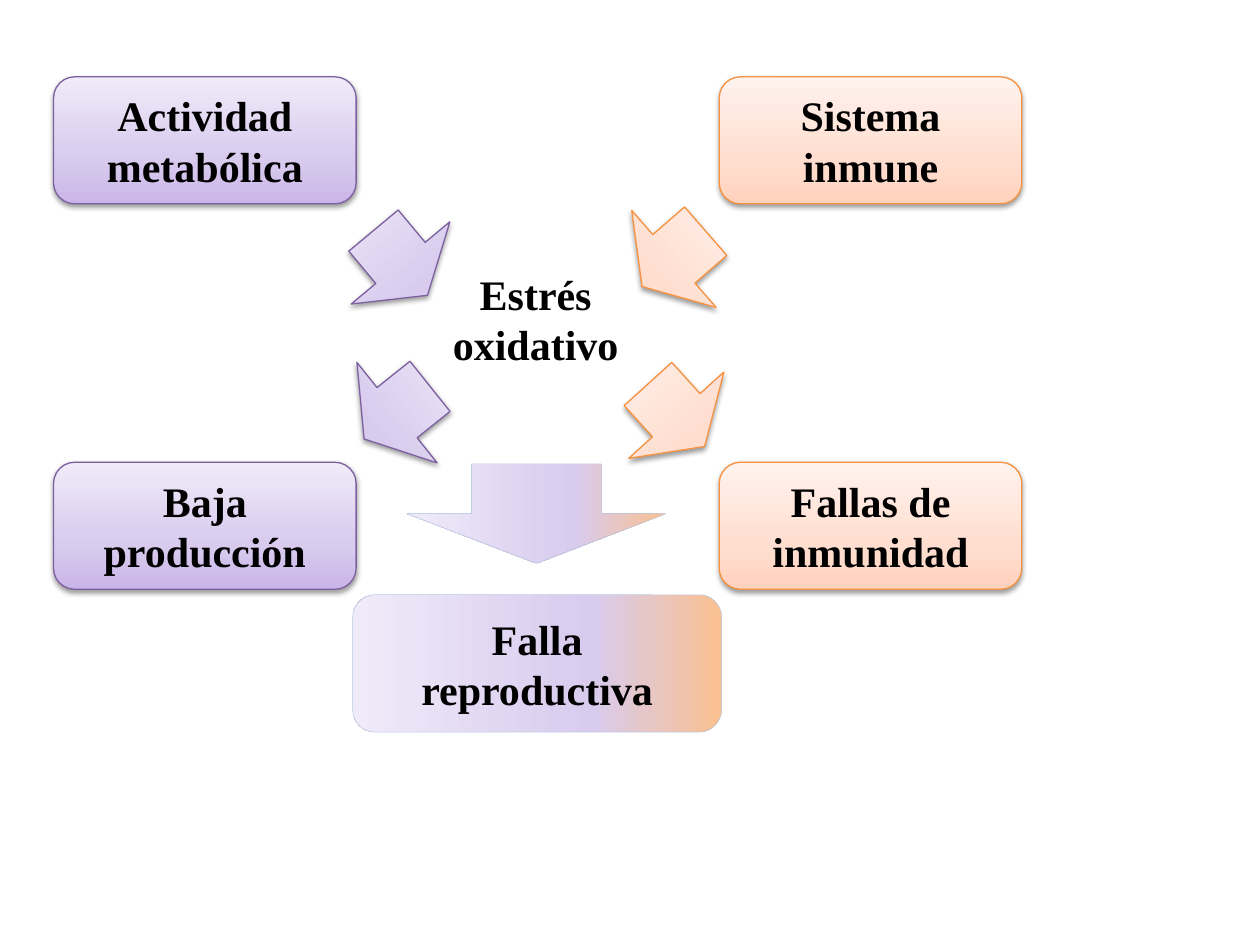
from dataclasses import dataclass

from lxml import etree
from pptx import Presentation
from pptx.dml.color import RGBColor
from pptx.enum.shapes import MSO_SHAPE
from pptx.enum.text import MSO_ANCHOR, MSO_AUTO_SIZE, PP_ALIGN
from pptx.oxml.ns import qn
from pptx.util import Cm, Pt

BOX = MSO_SHAPE.ROUNDED_RECTANGLE
ARROW = MSO_SHAPE.DOWN_ARROW
CENTER = PP_ALIGN.CENTER
MIDDLE = MSO_ANCHOR.MIDDLE
GROW = MSO_AUTO_SIZE.SHAPE_TO_FIT_TEXT


@dataclass(frozen=True)
class Skin:
    stops: tuple[str, str, str]
    angle: int
    line: str
    width: float
    shadow: bool


@dataclass(frozen=True)
class Theme:
    font: str = "Times New Roman"
    size: int = 24
    ink: str = "000000"
    marks: tuple[int, int, int] = (0, 35, 100)
    purple: Skin = Skin(("C9B5E8", "D8CBEE", "F0EAF9"), 90, "7D60A0", 0.75, True)
    orange: Skin = Skin(("FFD2BD", "FFDED0", "FFF2ED"), 90, "F69240", 0.75, True)
    blend: Skin = Skin(("FAC090", "D8CBEE", "F0EAF9"), 180, "B0C6E1", 0.25, False)


@dataclass(frozen=True)
class Part:
    """A filled shape; lengths are in centimetres."""
    kind: int
    skin: Skin
    left: float
    top: float
    width: float
    height: float
    turn: float = 0
    text: str = ""


THEME = Theme()


def add_color(parent, value: str):
    return etree.SubElement(parent, qn("a:srgbClr"), val=value)


def paint(shape, skin: Skin) -> None:
    """Apply a three-stop gradient, an outline and a soft shadow."""
    shape.fill.gradient()
    shape.fill.gradient_angle = skin.angle
    stops = shape._element.spPr.find(f".//{qn('a:gsLst')}")
    for old in list(stops):
        stops.remove(old)
    for mark, color in zip(THEME.marks, skin.stops):
        add_color(etree.SubElement(stops, qn("a:gs"), pos=str(mark * 1000)), color)

    shape.line.color.rgb = RGBColor.from_string(skin.line)
    shape.line.width = Pt(skin.width)

    shape.shadow.inherit = False
    if skin.shadow:
        effects = shape._element.spPr.find(qn("a:effectLst"))
        shade = etree.SubElement(
            effects, qn("a:outerShdw"), blurRad=str(Pt(3.1)), dist=str(Pt(1.6)),
            dir="5400000", rotWithShape="0")
        etree.SubElement(add_color(shade, "000000"), qn("a:alpha"), val="38000")


def write(frame, lines: list[str]) -> None:
    for i, line in enumerate(lines):
        para = frame.paragraphs[0] if i == 0 else frame.add_paragraph()
        para.text = line
        para.alignment = CENTER
        font = para.font
        font.name, font.size, font.bold = THEME.font, Pt(THEME.size), True
        font.color.rgb = RGBColor.from_string(THEME.ink)


def draw(slide, part: Part) -> None:
    shape = slide.shapes.add_shape(
        part.kind, Cm(part.left), Cm(part.top), Cm(part.width), Cm(part.height))
    shape.rotation = part.turn
    paint(shape, part.skin)
    if part.text:
        shape.text_frame.word_wrap = True
        shape.text_frame.vertical_anchor = MIDDLE
        write(shape.text_frame, [part.text])


def label(slide, lines: list[str]) -> None:
    box = slide.shapes.add_textbox(Cm(8.86), Cm(5.28), Cm(4.09), Cm(2.31))
    box.text_frame.word_wrap = False
    box.text_frame.auto_size = GROW
    write(box.text_frame, lines)


def main() -> None:
    deck = Presentation()
    deck.slide_width, deck.slide_height = Cm(25.4), Cm(19.05)
    slide = deck.slides.add_slide(deck.slide_layouts[6])

    # Centre label
    label(slide, ["Estrés ", "oxidativo "])

    # Corner boxes, two by two
    cols = ((1.08, THEME.purple), (14.5, THEME.orange))
    rows = ((1.55, ("Actividad metabólica", "Sistema inmune")),
            (9.32, ("Baja producción", "Fallas de inmunidad")))
    for top, texts in rows:
        for (left, skin), text in zip(cols, texts):
            draw(slide, Part(BOX, skin, left, top, 6.1, 2.56, text=text))

    # Arrows into and out of the centre
    for skin, left, top, turn in (
        (THEME.purple, 6.78, 4.45, 320.2),
        (THEME.purple, 6.71, 7.47, 51.4),
        (THEME.orange, 12.29, 4.37, 49),
        (THEME.orange, 12.34, 7.52, 317.8),
    ):
        draw(slide, Part(ARROW, skin, left, top, 2.59, 1.7, turn))

    # Outcome
    draw(slide, Part(ARROW, THEME.blend, 8.2, 9.35, 5.23, 2.01))
    draw(slide, Part(BOX, THEME.blend, 7.11, 11.99, 7.44, 2.77,
                     text="Falla reproductiva"))

    deck.save("out.pptx")


if __name__ == "__main__":
    main()
